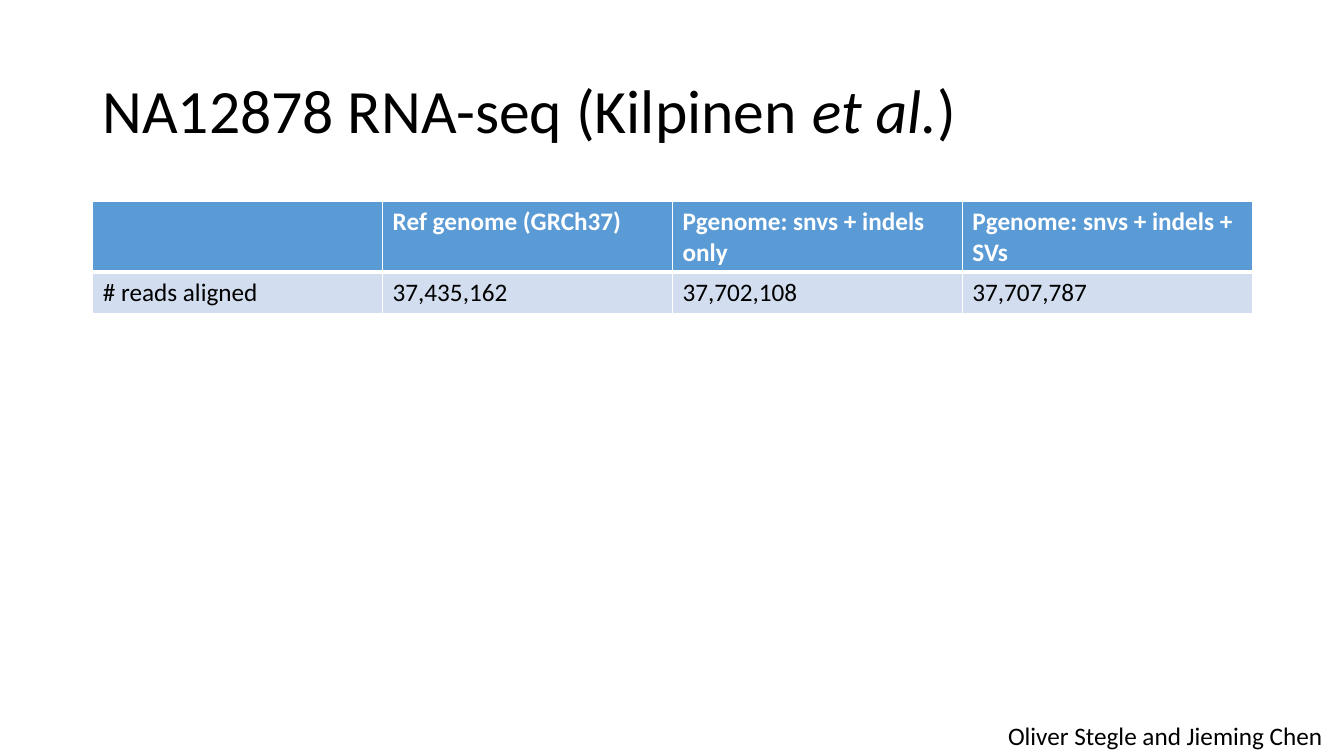
import lxml.etree
import pptx
import pptx.dml.color
import pptx.enum.text
import pptx.oxml.ns
import pptx.util

BLACK = pptx.dml.color.RGBColor(0x00, 0x00, 0x00)
WHITE = pptx.dml.color.RGBColor(0xFF, 0xFF, 0xFF)
HEADER_BLUE = pptx.dml.color.RGBColor(0x5B, 0x9B, 0xD5)
BODY_BLUE = pptx.dml.color.RGBColor(0xD2, 0xDE, 0xEF)
EMU_PER_PX = 9144

READS_TABLE = [
    ["", "Ref genome (GRCh37)", "Pgenome: snvs + indels only", "Pgenome: snvs + indels + SVs"],
    ["# reads aligned", "37,435,162", "37,702,108", "37,707,787"],
]
ROW_STYLES = [
    {"fill": HEADER_BLUE, "font": {"color": WHITE, "bold": True},
     "borders": {"L": 1, "R": 1, "T": 1, "B": 3}},
    {"fill": BODY_BLUE, "font": {"color": BLACK, "bold": False},
     "borders": {"L": 1, "R": 1, "T": 3, "B": 1}},
]


def px(length):
    """Turn whole pixels into EMU."""
    return pptx.util.Emu(length * EMU_PER_PX)


class SlideBuilder:
    """Hold the text style and the current slide."""

    def __init__(self, presentation):
        """Add a blank slide to the presentation."""
        self.slide = presentation.slides.add_slide(presentation.slide_layouts[6])
        self.style = {"name": "Calibri", "size": 18, "color": BLACK}

    def add_run(self, paragraph, text, **changes):
        """Add a run in the base style with the given changes."""
        run = paragraph.add_run()
        run.text = text
        values = {**self.style, **changes}
        run.font.color.rgb = values.pop("color")
        values["size"] = pptx.util.Pt(values["size"])
        for name, value in values.items():
            setattr(run.font, name, value)

    def add_text(self, box, runs, frame_format, line_spacing=1.0):
        """Add a one-paragraph text box."""
        shape = self.slide.shapes.add_textbox(*map(px, box))
        for name, value in frame_format.items():
            setattr(shape.text_frame, name, value)
        paragraph = shape.text_frame.paragraphs[0]
        paragraph.line_spacing = line_spacing
        for text, changes in runs:
            self.add_run(paragraph, text, **changes)

    def add_borders(self, cell, borders):
        """Draw the white borders of a cell."""
        properties = cell._tc.get_or_add_tcPr()
        for index, (side, points) in enumerate(borders.items()):
            line = lxml.etree.Element(
                pptx.oxml.ns.qn(f"a:ln{side}"), w=str(pptx.util.Pt(points)))
            fill = lxml.etree.SubElement(line, pptx.oxml.ns.qn("a:solidFill"))
            lxml.etree.SubElement(fill, pptx.oxml.ns.qn("a:srgbClr"), val=str(WHITE))
            properties.insert(index, line)

    def add_table(self, box, row_heights, rows, row_styles):
        """Add a table with equal columns and one style per row."""
        table = self.slide.shapes.add_table(len(rows), len(rows[0]), *map(px, box)).table
        for name in ("first_row", "horz_banding"):
            setattr(table, name, False)
        for row, height, texts, style in zip(table.rows, row_heights, rows, row_styles):
            row.height = px(height)
            for cell, text in zip(row.cells, texts):
                cell.fill.solid()
                cell.fill.fore_color.rgb = style["fill"]
                self.add_borders(cell, style["borders"])
                if text:
                    self.add_run(cell.text_frame.paragraphs[0], text, **style["font"])


def main():
    """Build and save the slide."""
    presentation = pptx.Presentation()
    presentation.slide_width, presentation.slide_height = px(1333), px(750)
    builder = SlideBuilder(presentation)
    builder.add_text(
        (92, 40, 1150, 145),
        [("NA12878 RNA-seq (Kilpinen ", {"size": 44}),
         ("et al.", {"size": 44, "italic": True}),
         (")", {"size": 44})],
        {"word_wrap": True, "vertical_anchor": pptx.enum.text.MSO_ANCHOR.MIDDLE},
        line_spacing=0.9,
    )
    builder.add_table((92, 200, 1150, 111), (70, 41), READS_TABLE, ROW_STYLES)
    builder.add_text(
        (990, 710, 336, 40),
        [("Oliver Stegle and Jieming Chen", {})],
        {"word_wrap": False, "auto_size": pptx.enum.text.MSO_AUTO_SIZE.SHAPE_TO_FIT_TEXT},
    )
    presentation.save("out.pptx")


if __name__ == "__main__":
    main()
